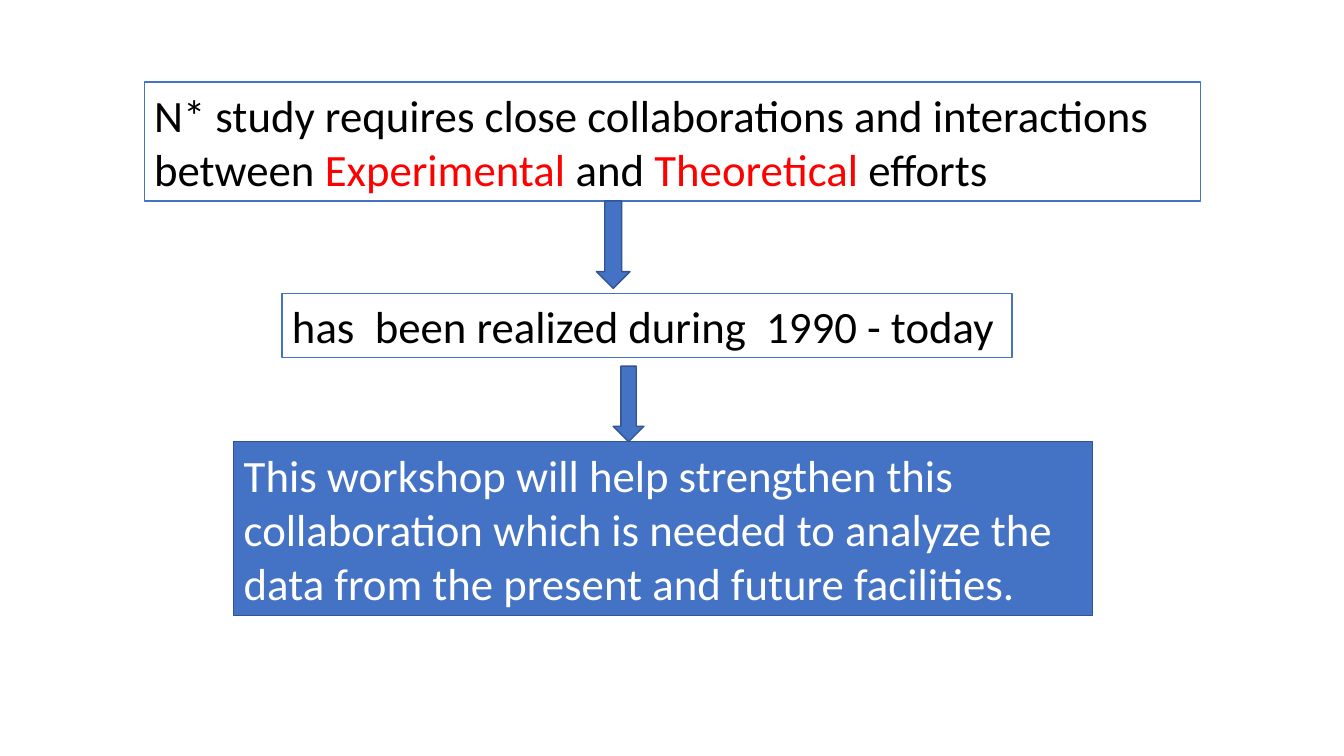
from pptx import Presentation
from pptx import util as u
from pptx.dml.color import RGBColor
from pptx.enum import shapes, text

HUES = {
    "white": "FFFFFF",
    "black": "000000",
    "red": "FF0000",
    "blue": "4472C4",
    "navy": "325491",
}


def hue(name):
    return RGBColor.from_string(HUES[name])


def add_form(slide, kind, place, fill, line):
    form = slide.shapes.add_shape(kind, *map(u.Pt, place))
    form.shadow.inherit = False
    form.fill.solid()
    form.fill.fore_color.rgb = hue(fill)
    form.line.color.rgb = hue(line)
    form.line.width = u.Pt(1)
    return form


def add_box(slide, place, lines, fill="white", line="blue", ink="black", marked=()):
    """Each line is a list of text parts; parts in marked turn red."""
    box = add_form(slide, shapes.MSO_SHAPE.RECTANGLE, place, fill, line)
    frame = box.text_frame
    frame.word_wrap = True
    frame.vertical_anchor = text.MSO_ANCHOR.MIDDLE
    for index, parts in enumerate(lines):
        para = frame.add_paragraph() if index else frame.paragraphs[0]
        para.alignment = text.PP_ALIGN.LEFT
        for part in parts:
            run = para.add_run()
            run.text = part
            run.font.name = "Calibri"
            run.font.size = u.Pt(32)
            run.font.color.rgb = hue("red" if part in marked else ink)


def add_arrow(slide, place):
    add_form(slide, shapes.MSO_SHAPE.DOWN_ARROW, place, "blue", "navy")


def main():
    deck = Presentation()
    deck.slide_width, deck.slide_height = u.Pt(960), u.Pt(540)
    slide = deck.slides.add_slide(deck.slide_layouts[6])

    # Need for joint work
    add_box(slide, (103, 58.5, 754.5, 85), [
        ["N* study requires close collaborations and interactions"],
        ["between ", "Experimental", " and ", "Theoretical", " efforts"],
    ], marked=("Experimental", "Theoretical"))

    # Progress so far
    add_box(slide, (201.5, 209.5, 521.5, 46), [
        ["has  been realized during  1990 - today"],
    ])

    # Aim of the workshop
    add_box(slide, (167, 315.5, 613.5, 124), [
        ["This workshop will help strengthen this"],
        ["collaboration which is needed to analyze the"],
        ["data from the present and future facilities."],
    ], fill="blue", line="navy", ink="white")

    # Arrows between the steps
    add_arrow(slide, (426, 143.5, 24, 62.5))
    add_arrow(slide, (438, 261.5, 22, 54))

    deck.save("out.pptx")


if __name__ == "__main__":
    main()
